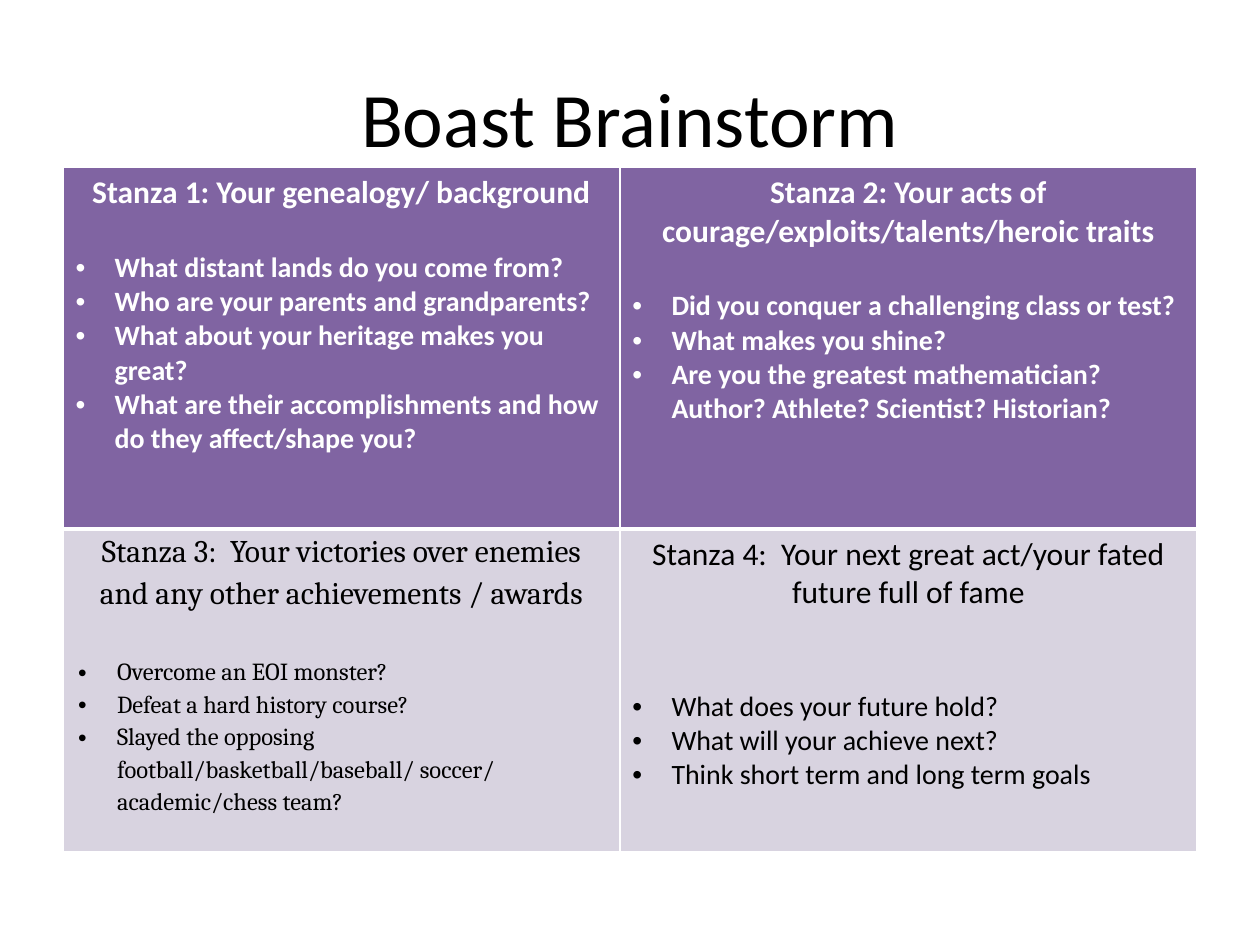
from lxml import etree
from pptx import Presentation
from pptx import util as u
from pptx.dml.color import RGBColor
from pptx.enum import text
from pptx.oxml.ns import qn

WHITE, BLACK = "FFFFFF", "000000"
DARK = {"fill": "8064A2", "color": WHITE, "bold": True}
LIGHT = {"fill": "D8D3E0", "color": BLACK, "bold": False}
SANS = {"face": "Calibri", "size": 16, "line": 1.0, "gap": 22, "side": 0.1, "edge": 0.05}
SERIF = {"face": "Cambria", "size": 14, "line": 1.15, "gap": 24, "side": 0.12, "edge": 0}
WIDTHS = [4.42, 4.58]
HEIGHTS = [2.87, 2.56]
CELLS = [
    [
        ("Stanza 1: Your genealogy/ background",
         ["What distant lands do you come from?",
          "Who are your parents and grandparents?",
          "What about your heritage makes you great?",
          "What are their accomplishments and how do they affect/shape you?"],
         DARK | SANS),
        ("Stanza 2: Your acts of courage/exploits/talents/heroic traits",
         ["Did you conquer a challenging class or test?",
          "What makes you shine?",
          "Are you the greatest mathematician? Author? Athlete? Scientist? Historian?"],
         DARK | SANS),
    ],
    [
        ("Stanza 3:  Your victories over enemies and any other achievements / awards",
         ["Overcome an EOI monster?",
          "Defeat a hard history course?",
          "Slayed the opposing football/basketball/baseball/ soccer/ academic/chess team?"],
         LIGHT | SERIF),
        ("Stanza 4:  Your next great act/your fated future full of fame",
         ["What does your future hold?",
          "What will your achieve next?",
          "Think short term and long term goals"],
         LIGHT | SANS | {"gap": 44}),
    ],
]


def tint(code):
    return RGBColor.from_string(code)


def assign(item, values):
    for name, value in values.items():
        setattr(item, name, value)


def style(para, size, look):
    assign(para.font, {"name": look["face"], "size": u.Pt(size), "bold": look["bold"]})
    para.font.color.rgb = tint(look["color"])


def bullet(para):
    props = para._p.get_or_add_pPr()
    props.set("marL", str(u.Inches(0.31)))
    props.set("indent", str(-u.Inches(0.31)))
    etree.SubElement(props, qn("a:buFont")).set("typeface", "Arial")
    etree.SubElement(props, qn("a:buChar")).set("char", "•")


def border(cell, points):
    props = cell._tc.get_or_add_tcPr()
    for side, width in points.items():
        line = etree.SubElement(props, qn("a:ln" + side), w=str(u.Pt(width)))
        fill = etree.SubElement(line, qn("a:solidFill"))
        etree.SubElement(fill, qn("a:srgbClr"), val=WHITE)


def stanza(cell, head, items, look):
    assign(cell, {
        "margin_left": u.Inches(look["side"]), "margin_right": u.Inches(look["side"]),
        "margin_top": u.Inches(look["edge"]), "margin_bottom": u.Inches(look["edge"]),
    })
    cell.fill.solid()
    cell.fill.fore_color.rgb = tint(look["fill"])
    frame = cell.text_frame
    para = frame.paragraphs[0]
    assign(para, {"text": head, "alignment": text.PP_ALIGN.CENTER,
                  "line_spacing": look["line"]})
    style(para, 18, look)
    for spot, item in enumerate(items):
        para = frame.add_paragraph()
        assign(para, {"text": item, "line_spacing": look["line"],
                      "space_before": u.Pt(0 if spot else look["gap"])})
        bullet(para)
        style(para, look["size"], look)


def title(slide, left, top, width, height):
    box = slide.shapes.add_textbox(*map(u.Inches, (left, top, width, height)))
    frame = box.text_frame
    assign(frame, {"word_wrap": True, "vertical_anchor": text.MSO_ANCHOR.MIDDLE})
    para = frame.paragraphs[0]
    assign(para, {"text": "Boast Brainstorm", "alignment": text.PP_ALIGN.CENTER})
    style(para, 44, LIGHT | SANS)


def grid(slide, left, top):
    size = (left, top, sum(WIDTHS), sum(HEIGHTS))
    table = slide.shapes.add_table(2, 2, *map(u.Inches, size)).table
    for col, width in zip(table.columns, WIDTHS):
        col.width = u.Inches(width)
    for row, (line, height) in enumerate(zip(CELLS, HEIGHTS)):
        table.rows[row].height = u.Inches(height)
        for col, parts in enumerate(line):
            cell = table.cell(row, col)
            border(cell, {"L": 1, "R": 1, "T": 3 if row else 1, "B": 1 if row else 3})
            stanza(cell, *parts)


def main():
    deck = Presentation()
    assign(deck, {"slide_width": u.Inches(10), "slide_height": u.Inches(7.5)})
    slide = deck.slides.add_slide(deck.slide_layouts[6])
    title(slide, 0.5, 0.3, 9, 1.25)
    grid(slide, 0.5, 1.33)
    deck.save("out.pptx")


if __name__ == "__main__":
    main()
